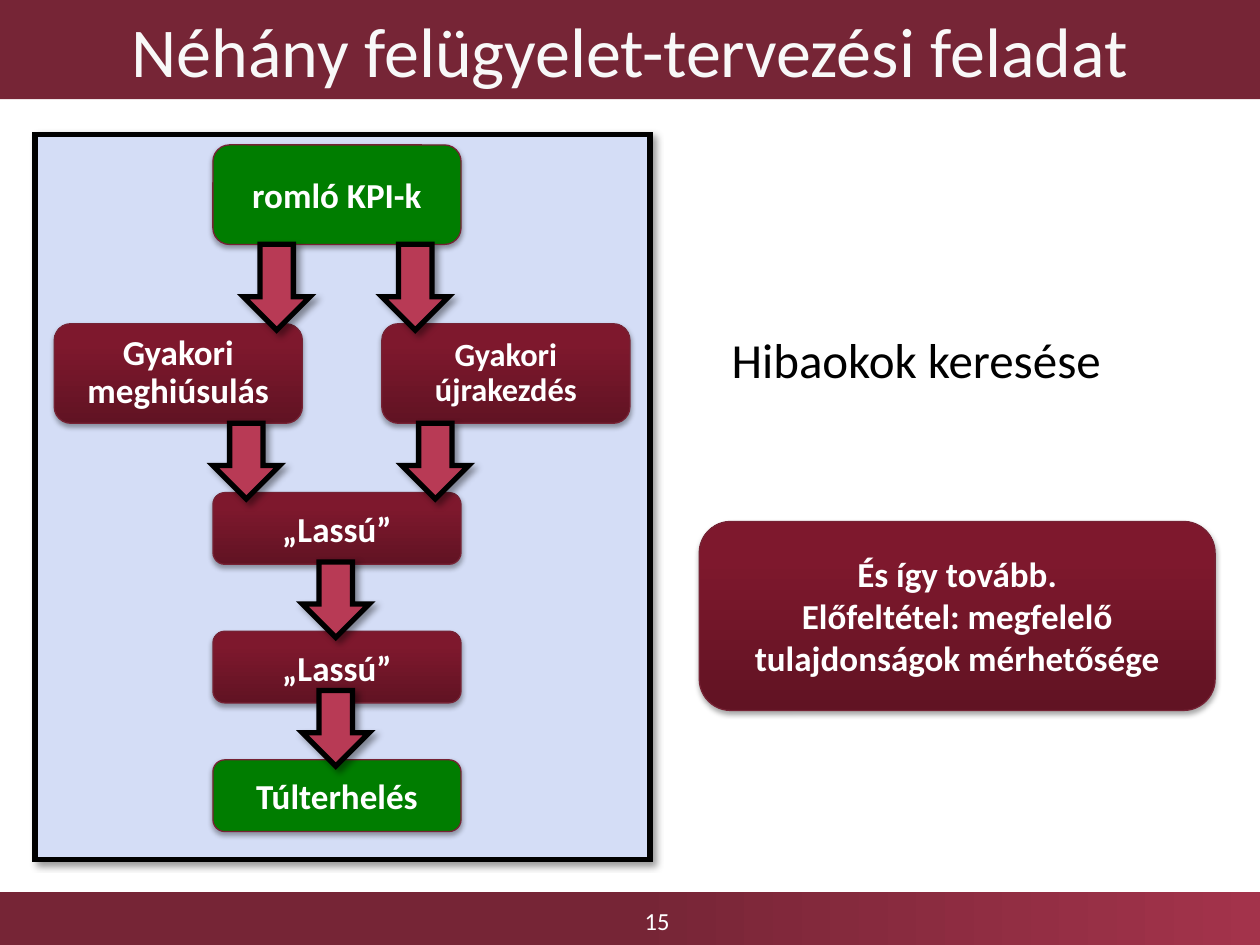
import pptx
import pptx.dml.color
import pptx.enum.shapes
import pptx.enum.text
import pptx.oxml
import pptx.oxml.ns
import pptx.util
from lxml import etree

Pt = pptx.util.Pt
qn = pptx.oxml.ns.qn
Kind = pptx.enum.shapes.MSO_SHAPE
Align = pptx.enum.text.PP_ALIGN
Mid = pptx.enum.text.MSO_ANCHOR.MIDDLE

# Content
TITLE = "Néhány felügyelet-tervezési feladat"
NOTE = "Hibaokok keresése"
PAGE = "15"
MORE = ["És így tovább.", "Előfeltétel: megfelelő tulajdonságok mérhetősége"]

GREEN = "007D00"
WINE = ([(0, "611323"), (80, "7E182D"), (100, "81162D")], 90)
BAR = ([(0, "762536"), (50, "762536"), (100, "A3334B")], 0)

# Rows of the flow: top and height
ROWS = [(82.8, 56.9), (185, 56.9), (281.5, 41), (360.7, 41), (434.2, 41)]
LEFT, CENTRE, RIGHT = 31, 121.7, 218.2
BOX_W = 141.8
# Boxes: text, left, row, fill, size, line spacing
BOXES = [
    ("Túlterhelés", CENTRE, 4, GREEN, 20, 1),
    ("„Lassú”", CENTRE, 3, WINE, 20, 1),
    ("„Lassú”", CENTRE, 2, WINE, 20, 1),
    ("Gyakori újrakezdés", RIGHT, 1, WINE, 18.5, 0.9),
    ("Gyakori meghiúsulás", LEFT, 1, WINE, 20, 0.9),
    ("romló KPI-k", CENTRE, 0, GREEN, 20, 1),
]
# Arrows: left, row pointed at, height
ARROWS = [(172.8, 4, 43.2), (172.8, 3, 43.2), (121.7, 2, 43.2),
          (229.7, 2, 43.2), (218.2, 1, 49), (139, 1, 49)]
ARROW_W, DIP = 38.2, 3.6

# Shadows: alpha %, blur, distance, angle
HARD = (40, 4, 3, 45)
SOFT = (35, 3.1, 1.8, 90)

deck = pptx.Presentation()
deck.slide_width, deck.slide_height = Pt(720), Pt(540)
slide = deck.slides.add_slide(deck.slide_layouts[6])


def rgb(code):
    return pptx.dml.color.RGBColor.from_string(code)


def add(node, tag, **attrs):
    return etree.SubElement(node, qn(tag), {k: str(v) for k, v in attrs.items()})


def paint(shape, fill):
    if isinstance(fill, str):
        shape.fill.solid()
        shape.fill.fore_color.rgb = rgb(fill)
        return
    stops, angle = fill
    shape.fill.gradient()
    shape.fill.gradient_angle = angle
    stop_list = next(shape._element.spPr.iter(qn("a:gsLst")))
    for old in list(stop_list):
        stop_list.remove(old)
    for pos, code in stops:
        stop = add(stop_list, "a:gs", pos=pos * 1000)
        add(stop, "a:srgbClr", val=code)


def cast(shape, shade):
    alpha, blur, dist, angle = shade
    effects = shape._element.spPr.find(qn("a:effectLst"))
    outer = add(effects, "a:outerShdw", blurRad=int(Pt(blur)), dist=int(Pt(dist)),
                dir=angle * 60000, algn="ctr", rotWithShape=0)
    add(add(outer, "a:srgbClr", val="000000"), "a:alpha", val=alpha * 1000)


def draw(kind, at, fill, line=None, shade=None):
    shape = slide.shapes.add_shape(kind, *map(Pt, at))
    paint(shape, fill)
    if line:
        shape.line.color.rgb = rgb(line[0])
        shape.line.width = Pt(line[1])
        add(shape._element.spPr.find(qn("a:ln")), "a:miter", lim=800000)
    else:
        shape.line.fill.background()
    shape.shadow.inherit = False
    if shade:
        cast(shape, shade)
    return shape


def write(shape, lines, size, color="FFFFFF", bold=False, align=Align.CENTER,
          space=1, wrap=True):
    frame = shape.text_frame
    frame.word_wrap = wrap
    frame.text = "\n".join(lines)
    look = {"name": "Calibri", "size": Pt(size), "bold": bold}
    for para in frame.paragraphs:
        para.alignment = align
        para.line_spacing = space
        for key, value in look.items():
            setattr(para.font, key, value)
        para.font.color.rgb = rgb(color)
    return frame


def node(lines, at, fill, size=20, space=1):
    shape = draw(Kind.ROUNDED_RECTANGLE, at, fill, ("752234", 0.75), SOFT)
    write(shape, lines, size, bold=True, space=space).vertical_anchor = Mid


# Footer band and page number
draw(Kind.RECTANGLE, (0, 509.8, 720, 30.2), BAR)
page = slide.shapes.add_textbox(*map(Pt, (258.5, 512, 234, 28)))
write(page, [PAGE], 14).vertical_anchor = Mid

# Panel and title
draw(Kind.RECTANGLE, (20, 77, 351.4, 414), "D4DDF6", ("000000", 3), HARD)
head = draw(Kind.RECTANGLE, (0, 0, 720, 56.7), "762536")
write(head, [TITLE], 40, "F8F8F8").vertical_anchor = Mid

# Flow boxes
for text, left, row, fill, size, space in BOXES:
    top, high = ROWS[row]
    node([text], (left, top, BOX_W, high), fill, size, space)

# Arrows, each dipping a little into the box below
for left, row, high in ARROWS:
    top = ROWS[row][0] + DIP - high
    draw(Kind.DOWN_ARROW, (left, top, ARROW_W, high), "B83A55", ("000000", 3), HARD)

# Right-hand side
note = slide.shapes.add_textbox(*map(Pt, (411, 185, 235.4, 41)))
write(note, [NOTE], 28, "000000", align=Align.LEFT, wrap=False)
node(MORE, (399.6, 298, 294.8, 108), WINE)

deck.save("out.pptx")
